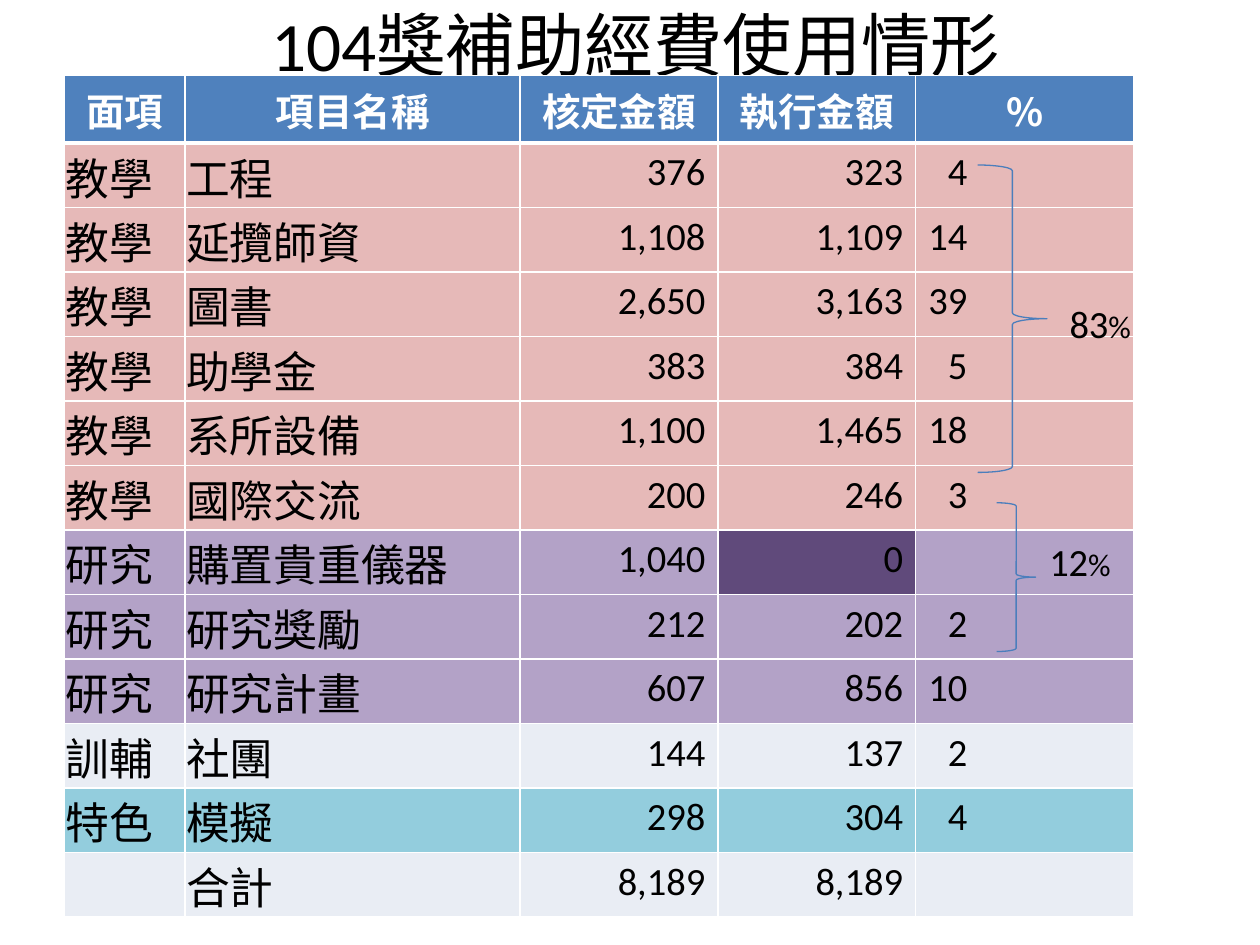
from lxml import etree
from pptx import Presentation
from pptx.dml.color import RGBColor
from pptx.enum.shapes import MSO_SHAPE
from pptx.enum.text import MSO_ANCHOR, PP_ALIGN
from pptx.oxml.ns import qn
from pptx.util import Pt

LEFT, CENTER, RIGHT = PP_ALIGN.LEFT, PP_ALIGN.CENTER, PP_ALIGN.RIGHT
TOP, MIDDLE = MSO_ANCHOR.TOP, MSO_ANCHOR.MIDDLE
BRACE = MSO_SHAPE.RIGHT_BRACE
LATIN, CJK = "Calibri", "Noto Sans CJK SC"

COLORS = {
    "text": "000000", "white": "FFFFFF", "header": "4F81BD", "brace": "4B7EBC",
    "teaching": "E6B9B8", "research": "B3A2C7", "unspent": "604A7B",
    "plain": "E9EDF4", "special": "93CDDD",
}
AREA_FILLS = {"教學": "teaching", "研究": "research", "訓輔": "plain",
              "特色": "special", "": "plain"}

HEADINGS = ["面項", "項目名稱", "核定金額", "執行金額", "%"]
BUDGET = [
    ("教學", "工程", "376", "323", "4"),
    ("教學", "延攬師資", "1,108", "1,109", "14"),
    ("教學", "圖書", "2,650", "3,163", "39"),
    ("教學", "助學金", "383", "384", "5"),
    ("教學", "系所設備", "1,100", "1,465", "18"),
    ("教學", "國際交流", "200", "246", "3"),
    ("研究", "購置貴重儀器", "1,040", "0", ""),
    ("研究", "研究獎勵", "212", "202", "2"),
    ("研究", "研究計畫", "607", "856", "10"),
    ("訓輔", "社團", "144", "137", "2"),
    ("特色", "模擬", "298", "304", "4"),
    ("", "合計", "8,189", "8,189", ""),
]
COLUMN_WIDTHS = [69, 191.5, 113, 113, 124.5]
HEADER_HEIGHT, ROW_HEIGHT = 38.6, 36.86
PERCENT_MARGIN = 95


def rgb(name):
    return RGBColor.from_string(COLORS[name])


def write(para, text, size=22, font=LATIN, color="text", bold=False, align=LEFT):
    para.alignment = align
    span = para.add_run()
    span.text = text
    span.font.size = Pt(size)
    span.font.name = font
    span.font.bold = bold
    span.font.color.rgb = rgb(color)
    east_asian = etree.SubElement(span.font._element, qn("a:ea"))
    east_asian.set("typeface", CJK)


def add_box(page, left, top, width, height, anchor=TOP):
    frame = page.shapes.add_textbox(Pt(left), Pt(top), Pt(width), Pt(height)).text_frame
    frame.word_wrap = True
    frame.vertical_anchor = anchor
    return frame.paragraphs[0]


def add_title(page, left, top, width, height):
    para = add_box(page, left, top, width, height, MIDDLE)
    write(para, "104", size=39.6, align=CENTER)
    write(para, "獎補助經費使用情形", size=39.6, font=CJK, align=CENTER)


def style_cell(cell, fill, bottom=1):
    """Give the cell white borders and a solid fill."""
    properties = cell._tc.get_or_add_tcPr()
    for side, width in (("L", 1), ("R", 1), ("T", 1), ("B", bottom)):
        line = etree.SubElement(properties, qn(f"a:ln{side}"), w=str(Pt(width)))
        solid = etree.SubElement(line, qn("a:solidFill"))
        etree.SubElement(solid, qn("a:srgbClr"), val=COLORS["white"])
    cell.fill.solid()
    cell.fill.fore_color.rgb = rgb(fill)


def fill_cell(cell, column, text):
    """Write a body cell: names fill the cell, numbers align right."""
    if column < 2:
        cell.vertical_anchor = MIDDLE
        cell.margin_left = cell.margin_right = cell.margin_top = Pt(0.75)
        cell.margin_bottom = 0
    elif column == 4:
        cell.margin_left, cell.margin_right = 0, Pt(PERCENT_MARGIN)
    if not text:
        return
    para = cell.text_frame.paragraphs[0]
    if column < 2:
        write(para, text, size=25, font=CJK)
    else:
        write(para, text, align=RIGHT)


def add_budget_table(page, left, top):
    heights = [HEADER_HEIGHT] + [ROW_HEIGHT] * len(BUDGET)
    table = page.shapes.add_table(
        len(heights), len(HEADINGS), Pt(left), Pt(top),
        Pt(sum(COLUMN_WIDTHS)), Pt(sum(heights))).table
    for column, width in zip(table.columns, COLUMN_WIDTHS):
        column.width = Pt(width)
    for row, height in zip(table.rows, heights):
        row.height = Pt(height)

    for column, heading in enumerate(HEADINGS):
        cell = table.cell(0, column)
        style_cell(cell, "header", bottom=3)
        write(cell.text_frame.paragraphs[0], heading, font=CJK,
              color="white", bold=True, align=CENTER)
    for row, values in enumerate(BUDGET, start=1):
        for column, text in enumerate(values):
            cell = table.cell(row, column)
            style_cell(cell, "unspent" if text == "0" else AREA_FILLS[values[0]])
            fill_cell(cell, column, text)


def add_subtotal(page, left, top, width, height, number, label_box):
    """Draw a brace in the box; label_box is relative to its top left corner."""
    brace = page.shapes.add_shape(BRACE, Pt(left), Pt(top), Pt(width), Pt(height))
    brace.shadow.inherit = False
    brace.fill.background()
    brace.line.color.rgb = rgb("brace")
    brace.line.width = Pt(0.75)
    right, down, label_width, label_height = label_box
    para = add_box(page, left + right, top + down, label_width, label_height)
    write(para, number)
    write(para, "%", size=18)


def main():
    deck = Presentation()
    deck.slide_width, deck.slide_height = Pt(720), Pt(540)
    page = deck.slides.add_slide(deck.slide_layouts[6])
    add_title(page, 36.75, 0, 653, 49.7)
    add_budget_table(page, 36.75, 43.2)
    add_subtotal(page, 558.7, 94.3, 39.6, 175.7, "83", (45.4, 73.5, 62.6, 33.8))
    add_subtotal(page, 569.5, 287.3, 22.3, 85, "12", (23, 16.5, 57, 33.8))
    deck.save("out.pptx")


if __name__ == "__main__":
    main()
